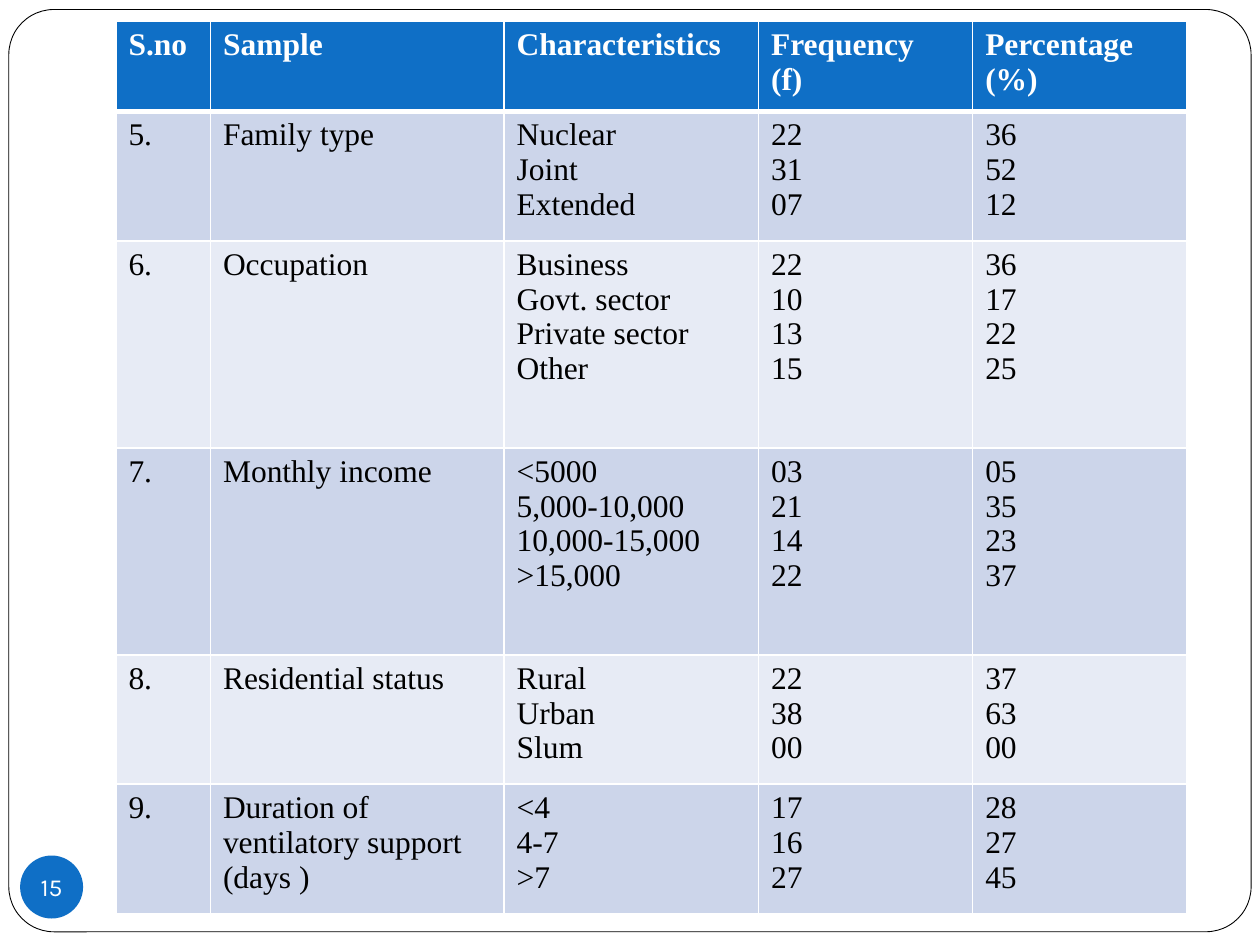
from dataclasses import dataclass

from lxml import etree
from pptx import Presentation
from pptx import util as u
from pptx.dml.color import RGBColor
from pptx.enum import shapes, text
from pptx.oxml import ns


@dataclass(frozen=True)
class Theme:
    accent: str = "0F6FC6"
    paper: str = "FFFFFF"
    ink: str = "000000"
    bands: tuple = ("CCD5EA", "E7EBF5")
    table_font: str = "Times New Roman"
    number_font: str = "Karla"
    table_size: int = 18
    number_size: int = 14
    rule: float = 1
    header_rule: float = 3


class Deck:
    """Places elements on a grid of 100 columns by 75 rows."""

    COLS, ROWS = 100, 75

    def __init__(self, theme):
        self.theme = theme
        self.prs = Presentation()
        self.prs.slide_width, self.prs.slide_height = u.Inches(10), u.Inches(7.5)
        self.s = None

    def new_slide(self):
        self.s = self.prs.slides.add_slide(self.prs.slide_layouts[6])

    def x(self, cols):
        return round(self.prs.slide_width * cols / self.COLS)

    def y(self, rows):
        return round(self.prs.slide_height * rows / self.ROWS)

    def box(self, at):
        left, top, width, height = at
        return self.x(left), self.y(top), self.x(width), self.y(height)

    def shape(self, kind, at, fill):
        sp = self.s.shapes.add_shape(kind, *self.box(at))
        sp.shadow.inherit = False
        sp.fill.solid()
        sp.fill.fore_color.rgb = RGBColor.from_string(fill)
        sp.line.fill.background()
        return sp

    def frame(self, at, corner):
        sp = self.shape(shapes.MSO_SHAPE.ROUNDED_RECTANGLE, at, self.theme.paper)
        sp.adjustments[0] = corner
        sp.line.color.rgb = RGBColor.from_string(self.theme.ink)
        sp.line.width = u.Pt(0.5)

    def page_number(self, number, at):
        sp = self.shape(shapes.MSO_SHAPE.OVAL, at, self.theme.accent)
        tf = sp.text_frame
        tf.margin_left = tf.margin_right = tf.margin_top = tf.margin_bottom = 0
        tf.word_wrap = False
        tf.vertical_anchor = text.MSO_ANCHOR.MIDDLE
        tf.text = str(number)
        p = tf.paragraphs[0]
        p.alignment = text.PP_ALIGN.CENTER
        self.font(p, self.theme.number_font, self.theme.number_size, self.theme.paper)

    def font(self, p, name, size, color, bold=False):
        p.font.name, p.font.size, p.font.bold = name, u.Pt(size), bold
        p.font.color.rgb = RGBColor.from_string(color)

    def table(self, left, top, widths, heights, rows):
        t = self.theme
        at = (left, top, sum(widths), sum(heights))
        table = self.s.shapes.add_table(len(rows), len(widths), *self.box(at)).table
        for column, width in zip(table.columns, widths):
            column.width = self.x(width)
        for i, (row, height) in enumerate(zip(rows, heights)):
            table.rows[i].height = self.y(height)
            header = i == 0
            fill = t.accent if header else t.bands[(i - 1) % len(t.bands)]
            for j, value in enumerate(row):
                cell = table.cell(i, j)
                cell.fill.solid()
                cell.fill.fore_color.rgb = RGBColor.from_string(fill)
                cell.text = value
                for p in cell.text_frame.paragraphs:
                    self.font(p, t.table_font, t.table_size,
                              t.paper if header else t.ink, header)
                self.borders(cell, top=t.header_rule if i == 1 else t.rule,
                             bottom=t.header_rule if header else t.rule)

    def borders(self, cell, top, bottom):
        tc_pr = cell._tc.get_or_add_tcPr()
        sides = {"L": self.theme.rule, "R": self.theme.rule, "T": top, "B": bottom}
        for k, (side, width) in enumerate(sides.items()):
            ln = etree.Element(ns.qn(f"a:ln{side}"), w=str(u.Pt(width)))
            fill = etree.SubElement(ln, ns.qn("a:solidFill"))
            etree.SubElement(fill, ns.qn("a:srgbClr"), val=self.theme.paper)
            tc_pr.insert(k, ln)


HEADER = ("S.no", "Sample", "Characteristics", "Frequency\n(f)", "Percentage (%)")

# Sample, then (characteristic, frequency, percentage) for each group
SAMPLES = [
    ("Family type",
     [("Nuclear", "22", "36"), ("Joint", "31", "52"), ("Extended", "07", "12")]),
    ("Occupation",
     [("Business", "22", "36"), ("Govt. sector", "10", "17"),
      ("Private sector", "13", "22"), ("Other", "15", "25")]),
    ("Monthly income",
     [("<5000", "03", "05"), ("5,000-10,000", "21", "35"),
      ("10,000-15,000", "14", "23"), (">15,000", "22", "37")]),
    ("Residential status",
     [("Rural", "22", "37"), ("Urban", "38", "63"), ("Slum", "00", "00")]),
    ("Duration of ventilatory support (days )",
     [("<4", "17", "28"), ("4-7", "16", "27"), (">7", "27", "45")]),
]
FIRST_NUMBER = 5
HEADER_HEIGHT = 7.15
HEIGHT_BY_GROUPS = {3: 10.26, 4: 16.43}


def main():
    deck = Deck(Theme())
    deck.new_slide()

    # Rounded page frame and slide number
    deck.frame((0.7, 0.75, 98.6, 73.2), corner=0.049)
    deck.page_number(15, (1.6, 67.9, 5, 5))

    # Sample characteristics
    rows, heights = [HEADER], [HEADER_HEIGHT]
    for number, (sample, groups) in enumerate(SAMPLES, FIRST_NUMBER):
        rows.append((f"{number}.", sample, *map("\n".join, zip(*groups))))
        heights.append(HEIGHT_BY_GROUPS[len(groups)])
    deck.table(9.2, 1.7, (7.5, 23.3, 20.2, 17, 17), heights, rows)

    deck.prs.save("out.pptx")


if __name__ == "__main__":
    main()
